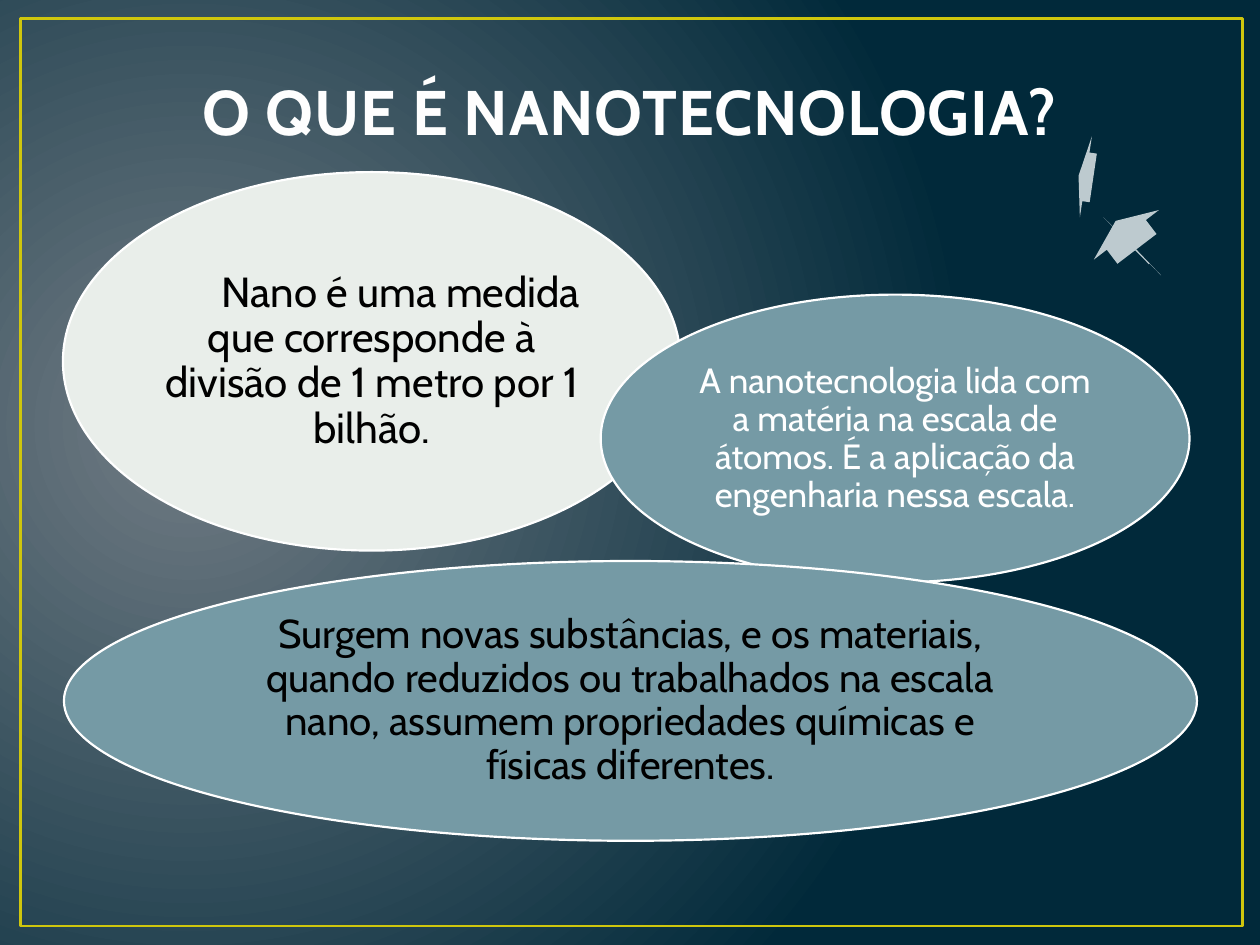
from dataclasses import dataclass

from lxml.etree import SubElement
from pptx import Presentation
from pptx.dml.color import RGBColor
from pptx.enum.shapes import MSO_SHAPE
from pptx.enum.text import MSO_ANCHOR, PP_ALIGN
from pptx.oxml.ns import qn
from pptx.shapes.autoshape import Shape
from pptx.slide import Slide
from pptx.util import Cm, Pt


@dataclass(frozen=True)
class Theme:
    font: str = "Cabin"
    glow: str = "717C84"
    night: str = "01293A"
    frame: str = "CFC60D"
    title: str = "FEFEFE"
    white: str = "FFFFFF"
    black: str = "000000"
    pale: str = "E9EEEA"
    teal: str = "759AA5"
    arrow: str = "BDCACF"
    head: float = 36
    large: float = 24
    mid: float = 23
    small: float = 20


@dataclass(frozen=True)
class Box:
    """Place on the slide, in centimetres."""
    left: float
    top: float
    width: float
    height: float

    def emu(self) -> tuple:
        return Cm(self.left), Cm(self.top), Cm(self.width), Cm(self.height)


@dataclass(frozen=True)
class Bubble:
    oval: Box
    area: Box
    text: str
    fill: str
    ink: str
    size: float
    indent: float = 0


@dataclass(frozen=True)
class Arrow:
    box: Box
    turn: float


THEME = Theme()
INSET = 0.08

BUBBLES = [
    Bubble(Box(1.27, 3.47, 12.45, 7.63), Box(3.1, 4.6, 8.79, 5.38),
           "Nano é uma medida que corresponde à divisão de 1 metro por 1 bilhão.",
           THEME.pale, THEME.black, THEME.large, 1.17),
    Bubble(Box(12.11, 5.94, 11.87, 5.8), Box(13.84, 6.8, 8.41, 4.1),
           "A nanotecnologia lida com a matéria na escala de átomos. "
           "É a aplicação da engenharia nessa escala.",
           THEME.teal, THEME.white, THEME.small),
    Bubble(Box(1.29, 11.31, 22.84, 5.64), Box(4.64, 12.14, 16.15, 3.99),
           "Surgem novas substâncias, e os materiais, quando reduzidos ou "
           "trabalhados na escala nano, assumem propriedades químicas e "
           "físicas diferentes.",
           THEME.teal, THEME.black, THEME.mid),
]
ARROWS = [
    Arrow(Box(21.74, 2.74, 0.3, 1.65), 188.4),
    Arrow(Box(22.81, 4.14, 0.03, 1.65), 315.2),
    Arrow(Box(22.35, 3.91, 0.71, 1.65), 232.7),
]


def paint(slide: Slide) -> None:
    """Fill the background with a round glow."""
    fill = slide.background.fill
    fill.gradient()
    for stop, tint, place in zip(fill.gradient_stops,
                                 (THEME.glow, THEME.night), (0, 1)):
        stop.color.rgb = RGBColor.from_string(tint)
        stop.position = place
    grad = slide.element.find(".//" + qn("a:gradFill"))
    grad.remove(grad.find(qn("a:lin")))
    path = SubElement(grad, qn("a:path"), path="circle")
    SubElement(path, qn("a:fillToRect"),
               l="15000", t="50000", r="85000", b="60000")


def draw(slide: Slide, kind: MSO_SHAPE, box: Box, fill: str = "",
         line: str = "", width: float = 1.25) -> Shape:
    shape = slide.shapes.add_shape(kind, *box.emu())
    shape.shadow.inherit = False
    if fill:
        shape.fill.solid()
        shape.fill.fore_color.rgb = RGBColor.from_string(fill)
    else:
        shape.fill.background()
    if line:
        shape.line.color.rgb = RGBColor.from_string(line)
        shape.line.width = Pt(width)
    else:
        shape.line.fill.background()
    return shape


def write(slide: Slide, box: Box, text: str, size: float, ink: str) -> Shape:
    """Add a wrapped, centred block of text."""
    shape = slide.shapes.add_textbox(*box.emu())
    frame = shape.text_frame
    frame.word_wrap = True
    frame.vertical_anchor = MSO_ANCHOR.MIDDLE
    frame.text = text
    para = frame.paragraphs[0]
    para.alignment = PP_ALIGN.CENTER
    font = para.runs[0].font
    font.name = THEME.font
    font.size = Pt(size)
    font.color.rgb = RGBColor.from_string(ink)
    return shape


def add_title(slide: Slide) -> None:
    shape = write(slide, Box(1.27, 0.76, 22.86, 2.36),
                  "O QUE É NANOTECNOLOGIA?", THEME.head, THEME.title)
    frame = shape.text_frame
    frame.vertical_anchor = MSO_ANCHOR.BOTTOM
    font = frame.paragraphs[0].runs[0].font
    font.bold = True
    shape.element.find(".//" + qn("a:rPr")).set("spc", "50")


def add_bubble(slide: Slide, item: Bubble) -> None:
    draw(slide, MSO_SHAPE.OVAL, item.oval, item.fill, THEME.white)
    frame = write(slide, item.area, item.text, item.size, item.ink).text_frame
    frame.margin_left = frame.margin_right = Cm(INSET)
    frame.margin_top = frame.margin_bottom = Cm(INSET)
    para = frame.paragraphs[0]
    para.line_spacing = 0.9
    if item.indent:
        props = para.runs[0].font._element.getparent().getparent() \
            .find(qn("a:pPr"))
        props.set("indent", str(Cm(item.indent)))


def add_arrow(slide: Slide, item: Arrow) -> None:
    shape = draw(slide, MSO_SHAPE.RIGHT_ARROW, item.box, THEME.arrow)
    shape.adjustments[0] = 0.6
    shape.adjustments[1] = 0.5
    shape.rotation = item.turn


def main() -> None:
    deck = Presentation()
    deck.slide_width, deck.slide_height = Cm(25.4), Cm(19.05)
    slide = deck.slides.add_slide(deck.slide_layouts[6])
    paint(slide)
    draw(slide, MSO_SHAPE.RECTANGLE, Box(0.41, 0.38, 24.64, 18.29),
         line=THEME.frame, width=1.5)
    add_title(slide)
    for bubble, arrow in zip(BUBBLES, ARROWS):
        add_bubble(slide, bubble)
        add_arrow(slide, arrow)
    deck.save("out.pptx")


if __name__ == "__main__":
    main()
